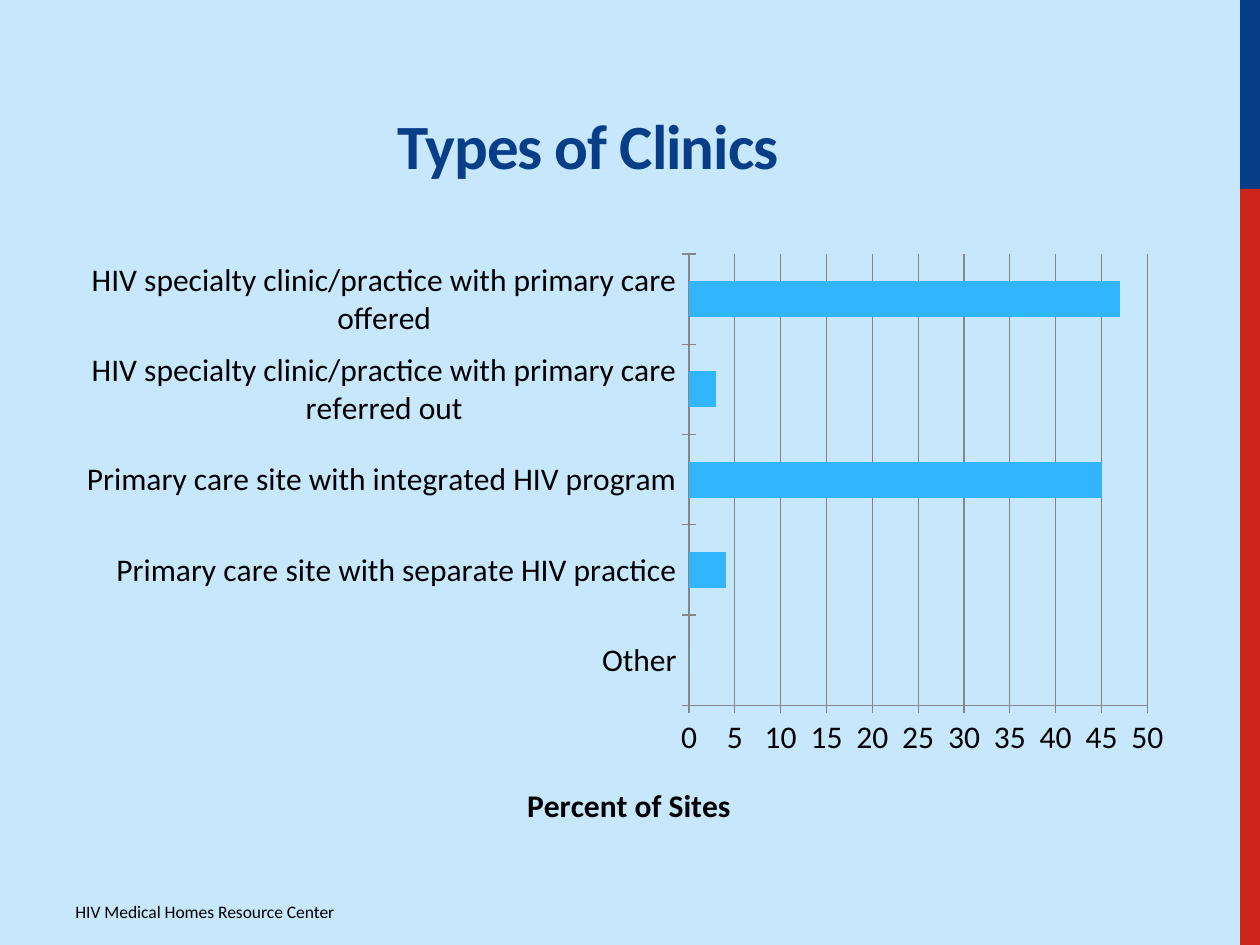
from dataclasses import dataclass

from lxml.etree import SubElement
from pptx import Presentation
from pptx.chart.data import CategoryChartData
from pptx.dml.color import RGBColor
from pptx.enum.chart import XL_CHART_TYPE, XL_TICK_MARK
from pptx.enum.shapes import MSO_SHAPE
from pptx.enum.text import MSO_ANCHOR, PP_ALIGN
from pptx.oxml.ns import qn
from pptx.util import Pt

EMU_PER_PX = 914400 / 126
SLIDE_WIDTH, SLIDE_HEIGHT = 1260, 945


@dataclass(frozen=True)
class Theme:
    font: str = "Calibri"
    panel: RGBColor = RGBColor(0xC6, 0xE7, 0xFC)
    navy: RGBColor = RGBColor(0x07, 0x3E, 0x87)
    red: RGBColor = RGBColor(0xCC, 0x24, 0x1B)
    bar: RGBColor = RGBColor(0x31, 0xB6, 0xFD)
    grid: RGBColor = RGBColor(0x86, 0x86, 0x86)
    text: RGBColor = RGBColor(0, 0, 0)
    title_size: int = 36
    chart_size: int = 18
    footer_size: int = 10


THEME = Theme()

CLINIC_SHARES = {
    "Other": 0,
    "Primary care site with separate HIV practice": 4,
    "Primary care site with integrated HIV program": 45,
    "HIV specialty clinic/practice with primary care referred out": 3,
    "HIV specialty clinic/practice with primary care offered": 47,
}


def px(length):
    return round(length * EMU_PER_PX)


def style_font(font, size, color, bold=False):
    font.name = THEME.font
    font.size = Pt(size)
    font.bold = bold
    font.color.rgb = color


def add_panel(slide, box, color):
    shape = slide.shapes.add_shape(MSO_SHAPE.RECTANGLE, *map(px, box))
    shape.shadow.inherit = False
    shape.fill.solid()
    shape.fill.fore_color.rgb = color
    shape.line.fill.background()


def add_background(slide, box):
    left, top, width, height = box
    stripe_width = 20
    stripe_left = left + width - stripe_width
    navy_height = height // 5
    add_panel(slide, (left, top, width - stripe_width, height), THEME.panel)
    add_panel(slide, (stripe_left, top, stripe_width, navy_height), THEME.navy)
    add_panel(slide, (stripe_left, top + navy_height, stripe_width, height - navy_height), THEME.red)


def add_text(slide, box, text):
    frame = slide.shapes.add_textbox(*map(px, box)).text_frame
    frame.word_wrap = True
    frame.text = text
    return frame


def add_title(slide, box):
    frame = add_text(slide, box, "Types of Clinics")
    frame.vertical_anchor = MSO_ANCHOR.BOTTOM
    frame.margin_bottom = px(28)
    paragraph = frame.paragraphs[0]
    paragraph.alignment = PP_ALIGN.CENTER
    style_font(paragraph.font, THEME.title_size, THEME.navy, bold=True)
    paragraph.runs[0].font._element.set("spc", "-60")


def add_footer(slide, box):
    frame = add_text(slide, box, "HIV Medical Homes Resource Center")
    style_font(frame.paragraphs[0].font, THEME.footer_size, THEME.text)


def set_layout(parent, **settings):
    layout = parent.find(qn("c:layout"))
    if layout is None:
        layout = parent.makeelement(qn("c:layout"))
        text = parent.find(qn("c:tx"))
        if text is None:
            parent.insert(0, layout)
        else:
            text.addnext(layout)
    manual = SubElement(layout, qn("c:manualLayout"))
    for name, value in settings.items():
        SubElement(manual, qn(f"c:{name}")).set("val", str(value))


def style_axis(axis):
    axis.major_tick_mark = XL_TICK_MARK.CROSS
    axis.minor_tick_mark = XL_TICK_MARK.NONE
    axis.format.line.color.rgb = THEME.grid
    style_font(axis.tick_labels.font, THEME.chart_size, THEME.text)


def add_clinic_chart(slide, box):
    data = CategoryChartData()
    data.categories = list(CLINIC_SHARES)
    data.add_series("Series 1", list(CLINIC_SHARES.values()))
    chart = slide.shapes.add_chart(XL_CHART_TYPE.BAR_CLUSTERED, *map(px, box), data).chart
    chart.has_legend = False
    chart.has_title = False
    style_font(chart.font, THEME.chart_size, THEME.text)

    plot = chart.plots[0]
    plot.gap_width = 150
    plot.vary_by_categories = False
    fill = plot.series[0].format.fill
    fill.solid()
    fill.fore_color.rgb = THEME.bar

    style_axis(chart.category_axis)
    chart.category_axis.has_major_gridlines = False
    value_axis = chart.value_axis
    style_axis(value_axis)
    value_axis.minimum_scale, value_axis.maximum_scale = 0, 50
    value_axis.major_unit = 5
    value_axis.has_major_gridlines = True
    value_axis.major_gridlines.format.line.color.rgb = THEME.grid
    value_axis.tick_labels.number_format = "General"
    value_axis.tick_labels.number_format_is_linked = False

    axis_title = value_axis.axis_title
    axis_title.text_frame.text = "Percent of Sites"
    style_font(axis_title.text_frame.paragraphs[0].font, THEME.chart_size, THEME.text, bold=True)
    set_layout(axis_title._element, xMode="edge", yMode="edge", x=0.41, y=0.89)
    set_layout(
        chart._chartSpace.chart.plotArea,
        layoutTarget="inner", xMode="edge", yMode="edge",
        x=0.56, y=0.02, w=0.41, h=0.75,
    )


def main():
    presentation = Presentation()
    presentation.slide_width = px(SLIDE_WIDTH)
    presentation.slide_height = px(SLIDE_HEIGHT)
    slide = presentation.slides.add_slide(presentation.slide_layouts[6])
    add_background(slide, (0, 0, SLIDE_WIDTH, SLIDE_HEIGHT))
    add_footer(slide, (63, 895, 473, 39))
    add_title(slide, (63, 21, 1050, 189))
    add_clinic_chart(slide, (63, 242, 1118, 602))
    presentation.save("out.pptx")


if __name__ == "__main__":
    main()
